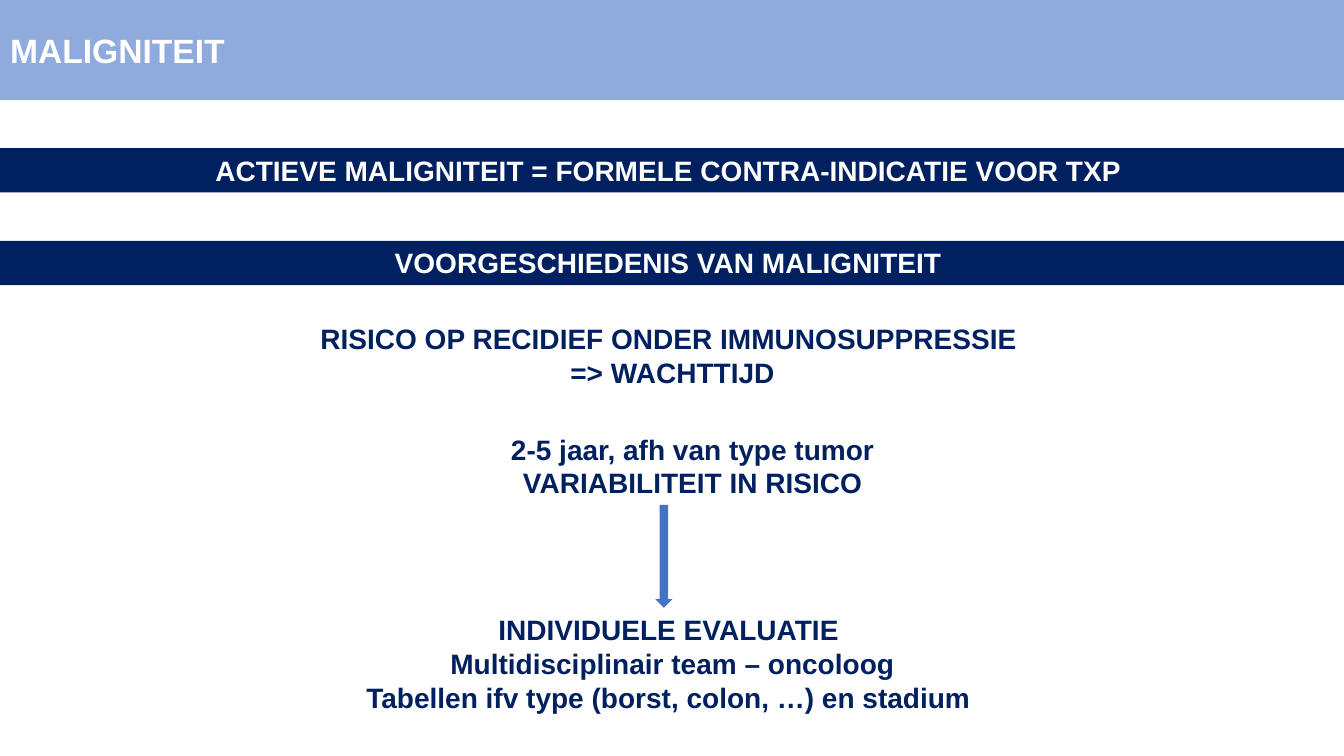
from pptx import Presentation
from pptx import util as u
from pptx.dml import color
from pptx.enum import shapes, text

EMU_PER_PX = 9144  # 100 px to the inch
WIDTH, HEIGHT = 1333, 750
COLORS = {"header": "8FAADC", "navy": "002060", "white": "FFFFFF", "arrow": "4472C4"}


class Page:
    """One slide together with its style."""

    font = "Arial"

    def __init__(self, deck):
        self.slide = deck.slides.add_slide(deck.slide_layouts[5])

    @staticmethod
    def px(*lengths):
        return [u.Emu(length * EMU_PER_PX) for length in lengths]

    @staticmethod
    def paint(box, name):
        box.fill.solid()
        box.fill.fore_color.rgb = color.RGBColor.from_string(COLORS[name])

    def add_lines(self, box, lines, size, ink, align):
        frame = box.text_frame
        frame.word_wrap = True
        for index, line in enumerate(lines):
            para = frame.paragraphs[0] if index == 0 else frame.add_paragraph()
            para.alignment = align
            span = para.add_run()
            span.text = line
            span.font.name = self.font
            span.font.size = u.Pt(size)
            span.font.bold = True
            span.font.color.rgb = color.RGBColor.from_string(COLORS[ink])

    def title(self, line, height):
        box = self.slide.shapes.title
        box.left, box.top, box.width, box.height = self.px(0, 0, WIDTH, height)
        self.paint(box, "header")
        self.add_lines(box, [line], 24, "white", text.PP_ALIGN.LEFT)
        box.text_frame.auto_size = text.MSO_AUTO_SIZE.NONE
        box.text_frame.vertical_anchor = text.MSO_ANCHOR.MIDDLE

    def block(self, left, top, width, height, lines, fill, ink):
        box = self.slide.shapes.add_textbox(*self.px(left, top, width, height))
        self.paint(box, fill)
        self.add_lines(box, lines, 20, ink, text.PP_ALIGN.CENTER)
        box.text_frame.auto_size = text.MSO_AUTO_SIZE.SHAPE_TO_FIT_TEXT

    def band(self, top, line):
        self.block(0, top, WIDTH, 44, [line], "navy", "white")

    def statement(self, left, top, height, lines):
        self.block(left, top, 1150, height, lines, "white", "navy")

    def down_arrow(self, left, top, width, height):
        arrow = self.slide.shapes.add_shape(
            shapes.MSO_SHAPE.DOWN_ARROW, *self.px(left, top, width, height))
        arrow.shadow.inherit = False
        self.paint(arrow, "arrow")
        arrow.line.fill.background()


def main():
    deck = Presentation()
    deck.slide_width, deck.slide_height = Page.px(WIDTH, HEIGHT)
    page = Page(deck)

    # Header and the two key messages
    page.title("MALIGNITEIT", 99)
    page.band(147, "ACTIEVE MALIGNITEIT = FORMELE CONTRA-INDICATIE VOOR TXP ")
    page.band(239, "VOORGESCHIEDENIS VAN MALIGNITEIT ")

    # From risk to individual evaluation
    page.statement(92, 314, 77, ["RISICO OP RECIDIEF ONDER IMMUNOSUPPRESSIE ",
                                 "=> WACHTTIJD"])
    page.statement(112, 424, 77, ["2-5 jaar, afh van type tumor",
                                  "VARIABILITEIT IN RISICO"])
    page.statement(92, 603, 111, ["INDIVIDUELE EVALUATIE ",
                                  "Multidisciplinair team – oncoloog",
                                  "Tabellen ifv type (borst, colon, …) en stadium "])
    page.down_arrow(650, 501, 17, 102)

    deck.save("out.pptx")


if __name__ == "__main__":
    main()
